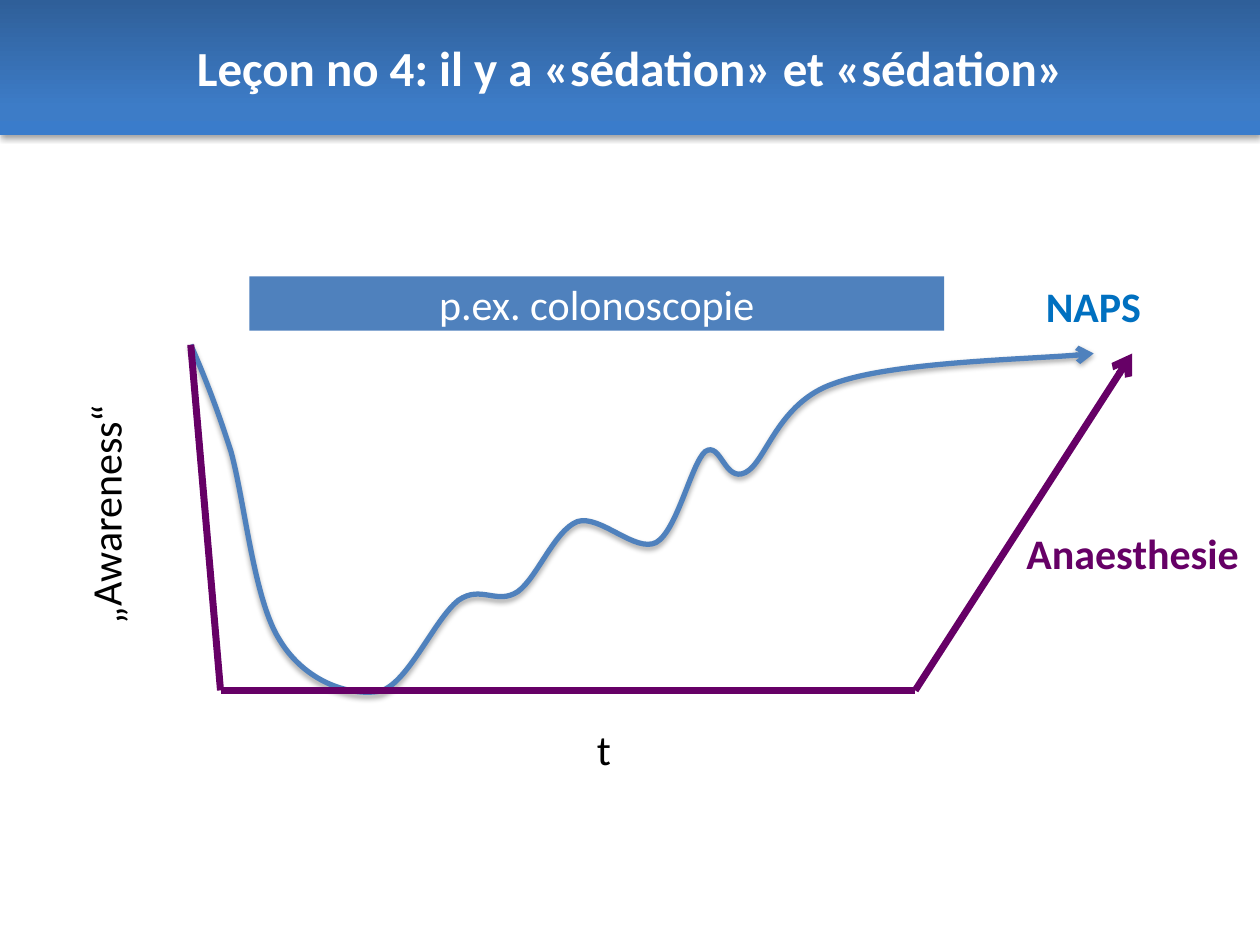
import copy

import lxml.etree
import pptx
import pptx.dml.color
import pptx.enum.shapes
import pptx.enum.text
import pptx.oxml.ns
import pptx.util

Pt = pptx.util.Pt
qn = pptx.oxml.ns.qn

COLORS = {
    "white": "FFFFFF", "black": "000000", "blue": "4F81BD",
    "naps": "0070C0", "purple": "660066",
}
HEADER_GRADIENT = [(0, "2F5F99"), (0.8, "3D7CC7"), (1, "3A7CCB")]

CURVE_START = (109, 197)
# Each row: two control points and the end point of one Bézier segment.
CURVE_SEGMENTS = [
    [(116, 213), (123, 230), (132, 258)],
    [(140, 287), (145, 343), (160, 366)],
    [(174, 389), (199, 398), (217, 395)],
    [(233, 391), (248, 354), (262, 343)],
    [(275, 334), (284, 346), (296, 338)],
    [(307, 330), (317, 303), (330, 298)],
    [(343, 294), (363, 316), (375, 310)],
    [(387, 303), (395, 265), (403, 258)],
    [(412, 252), (414, 276), (426, 270)],
    [(438, 264), (444, 230), (477, 219)],
    [(510, 207), (600, 205), (625, 202)],
]
ANAESTHESIA_POINTS = [(109, 197), (126, 394.5), (523, 394.5), (647, 202)]


def rgb(value):
    return pptx.dml.color.RGBColor.from_string(value)


def set_text(shape, text, color, size=24, bold=False, **frame_format):
    frame = shape.text_frame
    for name, value in frame_format.items():
        setattr(frame, name, value)
    run = frame.paragraphs[0].add_run()
    run.text = text
    font_format = {"name": "Calibri", "size": Pt(size), "bold": bold}
    for name, value in font_format.items():
        setattr(run.font, name, value)
    run.font.color.rgb = rgb(COLORS[color])


def add_label(slide, box, text, color, bold=False, wrap=False, rotation=0):
    shape = slide.shapes.add_textbox(*map(Pt, box))
    shape.rotation = rotation
    set_text(shape, text, color, bold=bold, word_wrap=wrap)


def add_bar(slide, box, text, size=24, bold=False):
    """Add a borderless rectangle with centred white text."""
    shape = slide.shapes.add_shape(
        pptx.enum.shapes.MSO_SHAPE.RECTANGLE, *map(Pt, box))
    shape.shadow.inherit = False
    shape.fill.solid()
    shape.fill.fore_color.rgb = rgb(COLORS["blue"])
    shape.line.fill.background()
    set_text(shape, text, "white", size, bold, word_wrap=False,
             margin_top=0, margin_bottom=0,
             vertical_anchor=pptx.enum.text.MSO_ANCHOR.MIDDLE)
    shape.text_frame.paragraphs[0].alignment = pptx.enum.text.PP_ALIGN.CENTER
    return shape


def apply_gradient(shape, stops):
    shape.fill.gradient()
    shape.fill.gradient_angle = 270
    stop_list = next(shape._element.spPr.iter(qn("a:gsLst")))
    while len(stop_list) < len(stops):
        stop_list.append(copy.deepcopy(stop_list[-1]))
    for stop, (position, color) in zip(shape.fill.gradient_stops, stops):
        stop.position = position
        stop.color.rgb = rgb(color)


def add_shadow(shape):
    shape.shadow.inherit = False
    effects = shape._element.spPr.find(qn("a:effectLst"))
    shadow = lxml.etree.SubElement(
        effects, qn("a:outerShdw"), blurRad=str(Pt(3.1)), dist=str(Pt(1.8)),
        dir="5400000", rotWithShape="0")
    color = lxml.etree.SubElement(shadow, qn("a:srgbClr"), val=COLORS["black"])
    lxml.etree.SubElement(color, qn("a:alpha"), val="35000")


def style_line(shape, color, width, arrow=False):
    shape.line.color.rgb = rgb(COLORS[color])
    shape.line.width = Pt(width)
    if arrow:
        line = shape._element.spPr.find(qn("a:ln"))
        lxml.etree.SubElement(line, qn("a:tailEnd"), type="arrow")


def add_curve(slide, start, segments):
    """Outline all points as a polyline, then turn each triple into a Bézier."""
    builder = slide.shapes.build_freeform(*map(Pt, start))
    points = [tuple(map(Pt, point)) for segment in segments for point in segment]
    builder.add_line_segments(points, close=False)
    shape = builder.convert_to_shape()
    shape.fill.background()
    style_line(shape, "blue", 3, arrow=True)
    add_shadow(shape)
    outline = next(shape._element.spPr.iter(qn("a:path")))
    lines = outline.findall(qn("a:lnTo"))
    for index in range(0, len(lines), 3):
        bezier = lxml.etree.SubElement(outline, qn("a:cubicBezTo"))
        for line in lines[index:index + 3]:
            bezier.append(line[0])
            outline.remove(line)


def add_polyline(slide, points):
    """Join the points with connectors, the last one ending in an arrow."""
    for start, end in zip(points, points[1:]):
        connector = slide.shapes.add_connector(
            pptx.enum.shapes.MSO_CONNECTOR.STRAIGHT, *map(Pt, start + end))
        style_line(connector, "purple", 4, arrow=end == points[-1])
        lxml.etree.SubElement(connector._element.spPr, qn("a:effectLst"))


def main():
    presentation = pptx.Presentation()
    presentation.slide_width = Pt(720)
    presentation.slide_height = Pt(540)
    slide = presentation.slides.add_slide(presentation.slide_layouts[6])

    header = add_bar(slide, (0, 0, 720, 77),
                     "Leçon no 4: il y a «sédation» et «sédation»", 28, True)
    apply_gradient(header, HEADER_GRADIENT)
    add_shadow(header)

    add_label(slide, (334, 410, 23, 36), "t", "black")
    add_label(slide, (-11, 274, 143, 37), "„Awareness“", "black", rotation=270)
    add_curve(slide, CURVE_START, CURVE_SEGMENTS)
    add_polyline(slide, ANAESTHESIA_POINTS)
    add_label(slide, (590.5, 157, 87, 36), "NAPS", "naps", True, True)
    add_label(slide, (579.5, 298, 149, 36), "Anaesthesie", "purple", True, True)
    add_bar(slide, (142.5, 158, 397, 31), "p.ex. colonoscopie")

    presentation.save("out.pptx")


if __name__ == "__main__":
    main()
